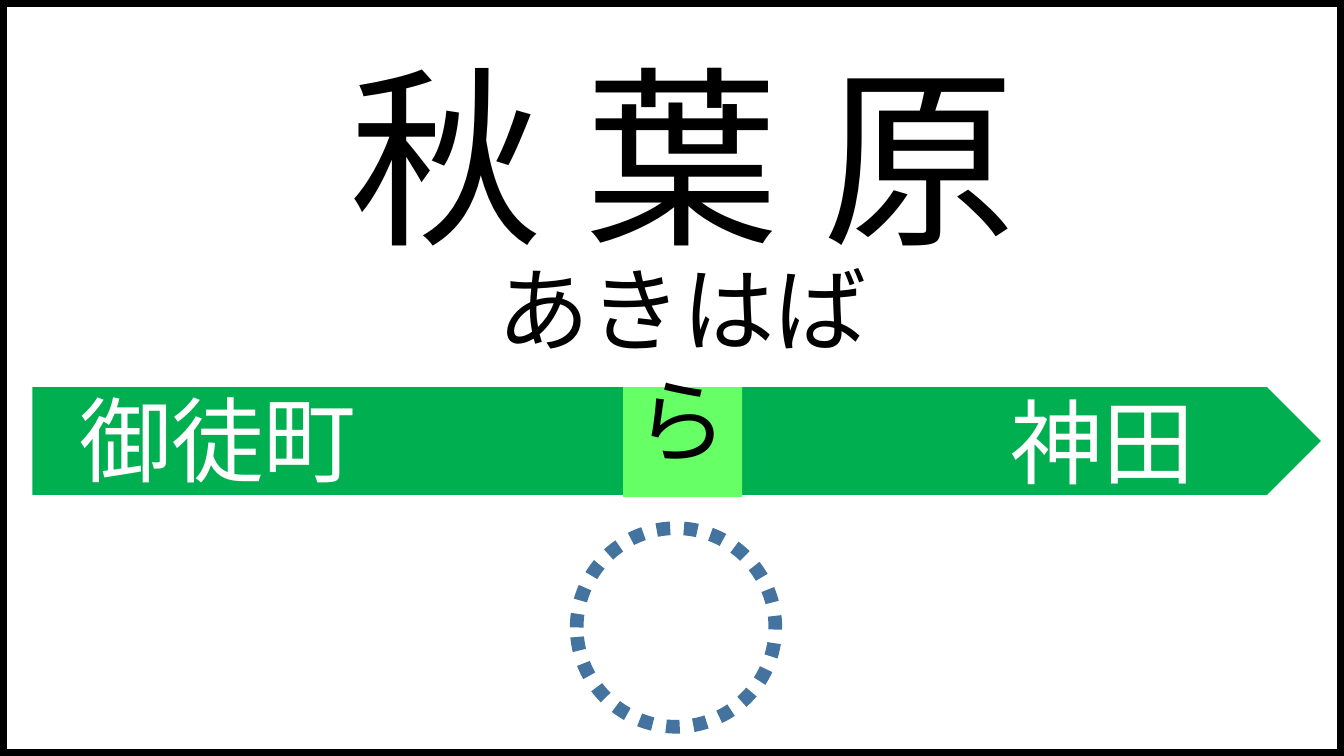
"""Build a station name board with its neighbouring stops."""
from dataclasses import dataclass
from typing import Optional

from pptx import Presentation
from pptx.dml.color import RGBColor
from pptx.enum.dml import MSO_LINE
from pptx.enum.lang import MSO_LANGUAGE_ID
from pptx.enum.shapes import MSO_SHAPE
from pptx.enum.text import MSO_ANCHOR, MSO_AUTO_SIZE, PP_ALIGN
from pptx.util import Emu, Pt

PX = 9144
BLACK = RGBColor(0x00, 0x00, 0x00)
WHITE = RGBColor(0xFF, 0xFF, 0xFF)
GREEN = RGBColor(0x00, 0xB0, 0x50)
LIME = RGBColor(0x66, 0xFF, 0x66)
BLUE = RGBColor(0x43, 0x73, 0x9E)


@dataclass
class Box:
    left: int
    top: int
    width: int
    height: int

    def emu(self) -> list[Emu]:
        return [Emu(n * PX) for n in (self.left, self.top, self.width, self.height)]


@dataclass
class Form:
    kind: MSO_SHAPE
    box: Box
    fill: Optional[RGBColor] = None
    line: Optional[RGBColor] = None
    weight: float = 0
    dash: Optional[MSO_LINE] = None


@dataclass
class Label:
    text: str
    box: Box
    size: int
    color: RGBColor
    wrap: bool = False


BAND = [
    Form(MSO_SHAPE.PENTAGON, Box(32, 384, 1278, 107), fill=GREEN),
    Form(MSO_SHAPE.RECTANGLE, Box(618, 384, 118, 109), fill=LIME),
]
NAME = Label("秋 葉 原", Box(333, 32, 688, 242), 138, BLACK)
LABELS = [
    Label("あきはばら", Box(454, 245, 445, 121), 66, BLACK, wrap=True),
    Label("御徒町", Box(67, 375, 298, 121), 66, WHITE),
    Label("神田", Box(991, 377, 205, 121), 66, WHITE),
]
RIMS = [
    Form(MSO_SHAPE.RECTANGLE, Box(0, 0, 1333, 750), line=BLACK, weight=10),
    Form(MSO_SHAPE.OVAL, Box(572, 524, 197, 197), line=BLUE, weight=9.75,
         dash=MSO_LINE.ROUND_DOT),
]


def draw(slide, form: Form) -> None:
    shape = slide.shapes.add_shape(form.kind, *form.box.emu())
    shape.shadow.inherit = False
    if form.fill is None:
        shape.fill.background()
    else:
        shape.fill.solid()
        shape.fill.fore_color.rgb = form.fill
    if form.line is None:
        shape.line.fill.background()
        return
    shape.line.color.rgb = form.line
    shape.line.width = Pt(form.weight)
    if form.dash is not None:
        shape.line.dash_style = form.dash


def write(shape, label: Label) -> None:
    shape.left, shape.top, shape.width, shape.height = label.box.emu()
    frame = shape.text_frame
    frame.word_wrap = label.wrap
    frame.auto_size = MSO_AUTO_SIZE.SHAPE_TO_FIT_TEXT
    frame.vertical_anchor = MSO_ANCHOR.TOP
    para = frame.paragraphs[0]
    para.alignment = PP_ALIGN.CENTER
    run = para.add_run()
    run.text = label.text
    run.font.name = "Calibri"
    run.font.size = Pt(label.size)
    run.font.color.rgb = label.color
    run.font.language_id = MSO_LANGUAGE_ID.JAPANESE


def main() -> None:
    deck = Presentation()
    deck.slide_width, deck.slide_height = Emu(1333 * PX), Emu(750 * PX)
    slide = deck.slides.add_slide(deck.slide_layouts[5])
    for form in BAND:
        draw(slide, form)
    write(slide.shapes.title, NAME)
    for label in LABELS:
        write(slide.shapes.add_textbox(*label.box.emu()), label)
    for form in RIMS:
        draw(slide, form)
    deck.save("out.pptx")


if __name__ == "__main__":
    main()
